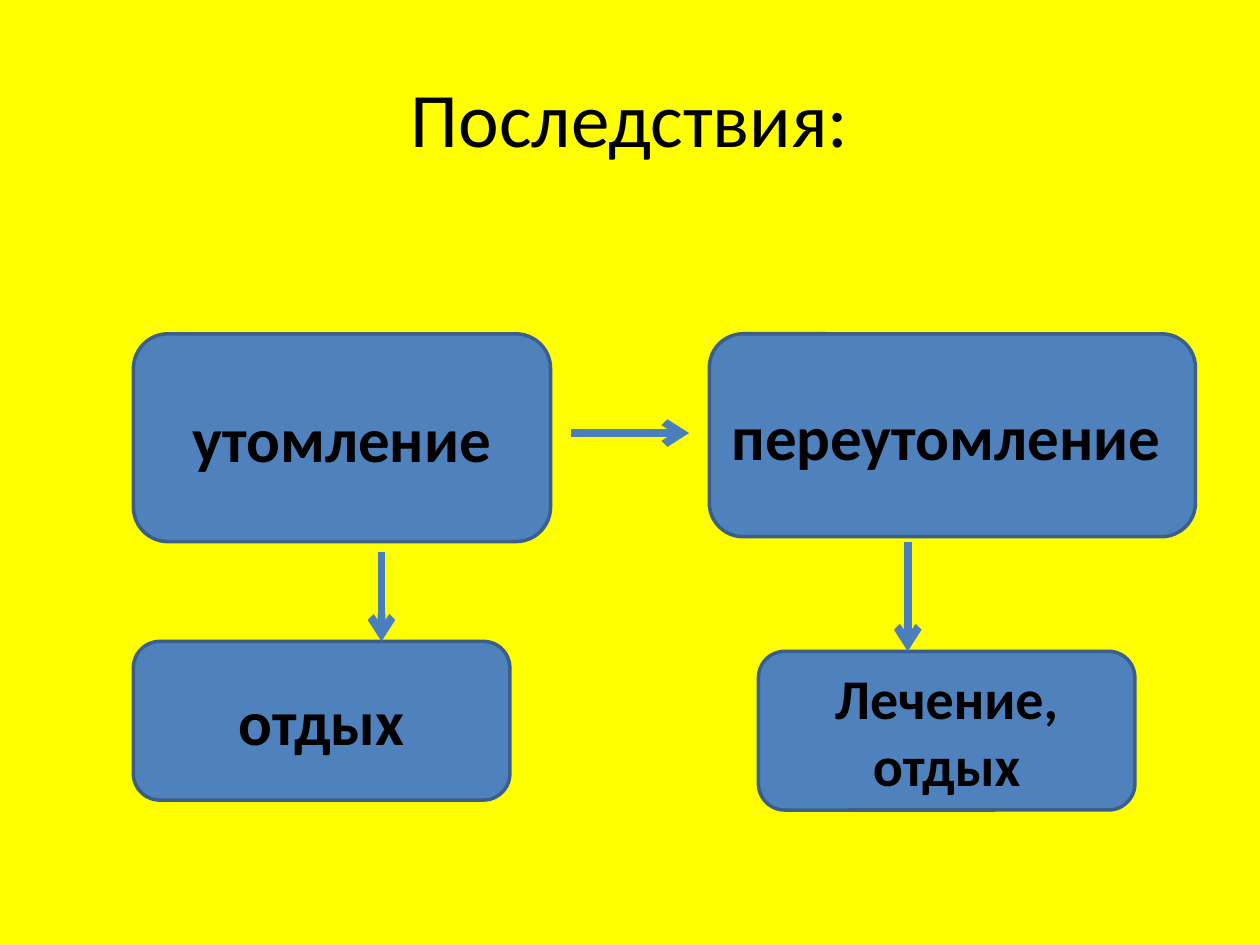
from dataclasses import dataclass

from lxml import etree
from pptx import Presentation
from pptx import util as u
from pptx.dml.color import RGBColor
from pptx.enum import shapes, text
from pptx.oxml import ns


@dataclass(frozen=True)
class Theme:
    font: str = "Calibri"
    background: str = "FFFF00"
    ink: str = "000000"
    fill: str = "4F81BD"
    outline: str = "3A5F8C"
    arrow: str = "4B7EBC"
    title_size: int = 44
    box_size: int = 36
    small_size: int = 32
    outline_width: float = 2
    arrow_width: float = 4.5


THEME = Theme()
CENTER = text.PP_ALIGN.CENTER
LEFT = text.PP_ALIGN.LEFT


def rgb(value):
    return RGBColor.from_string(value)


def write(sp, words, size, bold=False, align=CENTER):
    tf = sp.text_frame
    tf.word_wrap = True
    tf.vertical_anchor = text.MSO_ANCHOR.MIDDLE
    p = tf.paragraphs[0]
    p.alignment = align
    r = p.add_run()
    r.text = words
    r.font.name = THEME.font
    r.font.size = u.Pt(size)
    r.font.bold = bold
    r.font.color.rgb = rgb(THEME.ink)


def add_title(s, left, top, width, height, words):
    sp = s.shapes.add_textbox(u.Cm(left), u.Cm(top), u.Cm(width), u.Cm(height))
    write(sp, words, THEME.title_size)


def add_box(s, left, top, width, height, words, size=THEME.box_size, align=CENTER):
    sp = s.shapes.add_shape(shapes.MSO_SHAPE.ROUNDED_RECTANGLE,
                            u.Cm(left), u.Cm(top), u.Cm(width), u.Cm(height))
    sp.shadow.inherit = False
    sp.fill.solid()
    sp.fill.fore_color.rgb = rgb(THEME.fill)
    sp.line.color.rgb = rgb(THEME.outline)
    sp.line.width = u.Pt(THEME.outline_width)
    write(sp, words, size, bold=True, align=align)


def add_arrow(s, x1, y1, x2, y2):
    cx = s.shapes.add_connector(shapes.MSO_CONNECTOR.STRAIGHT,
                                u.Cm(x1), u.Cm(y1), u.Cm(x2), u.Cm(y2))
    cx.line.color.rgb = rgb(THEME.arrow)
    cx.line.width = u.Pt(THEME.arrow_width)
    etree.SubElement(cx.line._get_or_add_ln(), ns.qn("a:tailEnd"), type="arrow")
    etree.SubElement(cx._element.spPr, ns.qn("a:effectLst"))


def add_fatigue(s, left, top):
    remedy_top = top + 6.2
    add_box(s, left, top, 8.41, 4.19, "утомление")
    add_box(s, left, remedy_top, 7.59, 3.2, "отдых")
    add_arrow(s, left + 5, top + 4.4, left + 5, remedy_top)


def add_overfatigue(s, left, top):
    remedy_top = top + 6.4
    add_box(s, left, top, 9.8, 4.09, "переутомление", align=LEFT)
    add_box(s, left + 0.99, remedy_top, 7.59, 3.2, "Лечение, отдых", THEME.small_size)
    add_arrow(s, left + 4, top + 4.19, left + 4, remedy_top)


def add_consequences(s, left, top):
    add_fatigue(s, left, top)
    add_overfatigue(s, left + 11.61, top)
    add_arrow(s, left + 8.82, top + 2, left + 11.2, top + 2)


def main():
    prs = Presentation()
    prs.slide_width, prs.slide_height = u.Cm(25.4), u.Cm(19.05)
    s = prs.slides.add_slide(prs.slide_layouts[6])
    s.background.fill.solid()
    s.background.fill.fore_color.rgb = rgb(THEME.background)
    add_title(s, 1.27, 0.76, 22.86, 3.18, "Последствия:")
    add_consequences(s, 2.69, 6.73)
    prs.save("out.pptx")


if __name__ == "__main__":
    main()
